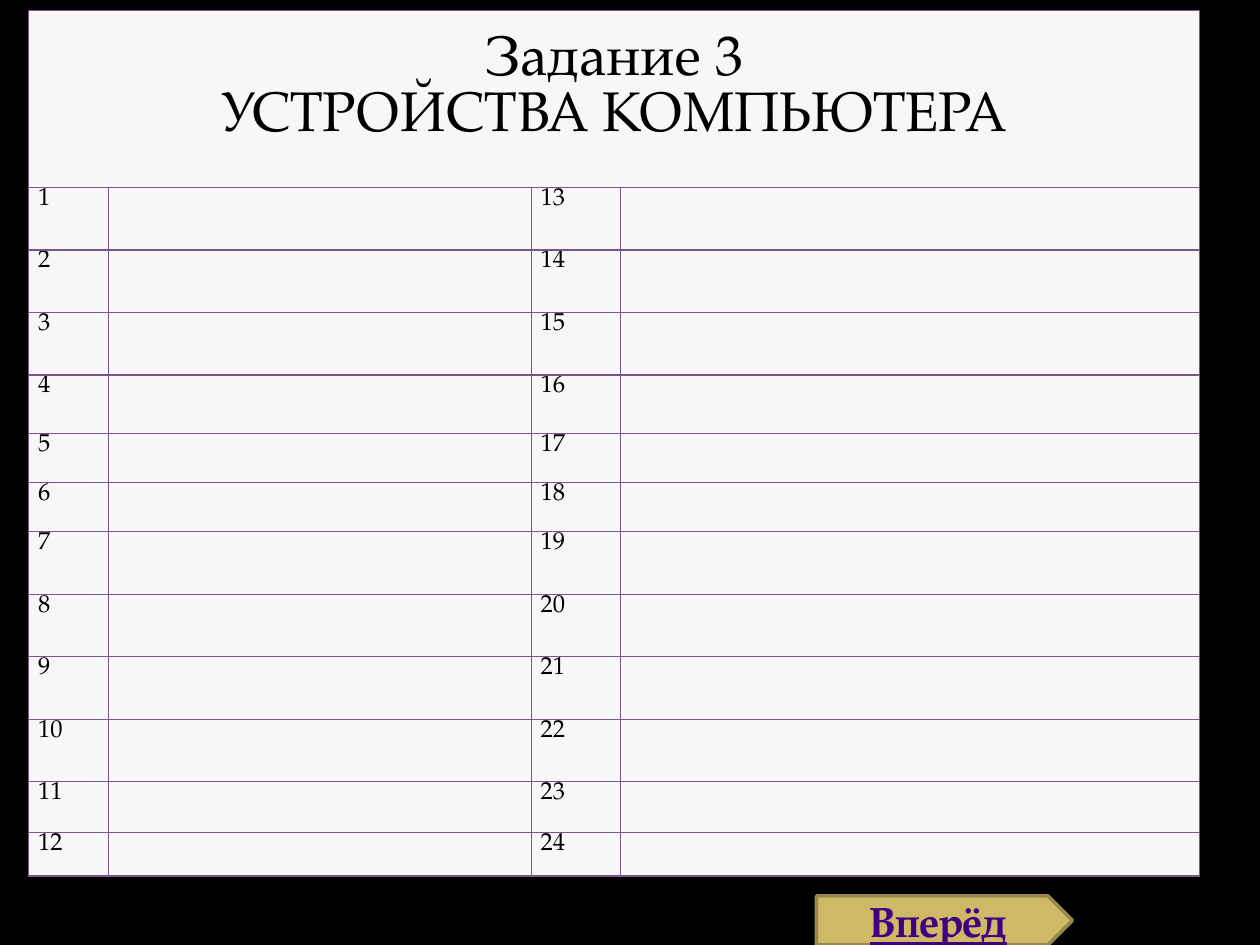
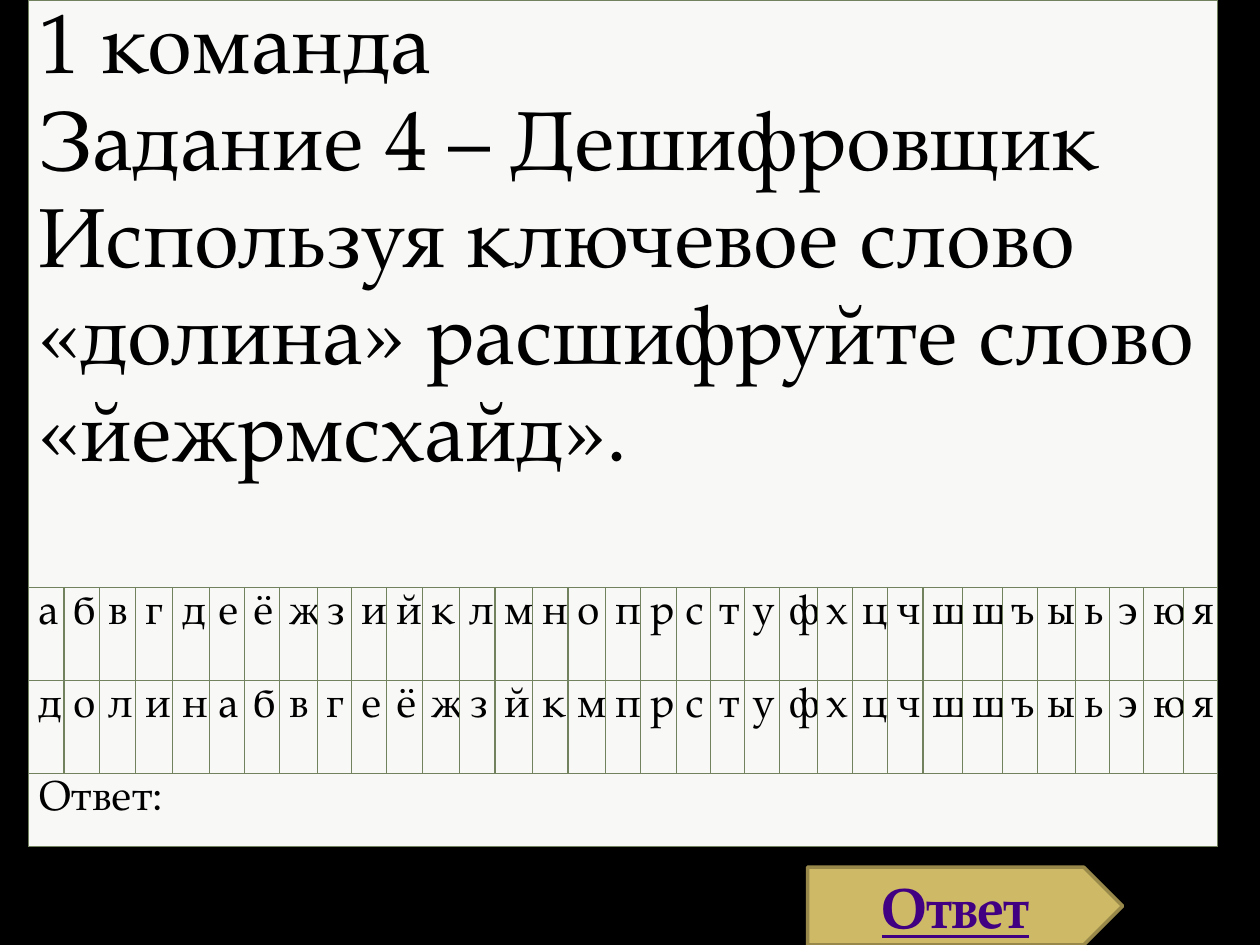
from lxml.etree import SubElement
from pptx import Presentation
from pptx.dml.color import RGBColor
from pptx.enum.shapes import MSO_SHAPE
from pptx.enum.text import MSO_ANCHOR, PP_ALIGN
from pptx.oxml.ns import qn
from pptx.util import Cm, Pt

FONT = "TeX Gyre Pagella"
BLACK, GOLD, GOLD_EDGE, LINK = "000000", "CEB966", "98894B", "410082"
TABLE_LEFT = 0.58
BLANK_LAYOUT = 6


def color(hex_string):
    return RGBColor.from_string(hex_string)


class Deck:
    """Holds the shared style and the current slide; lengths are in cm."""

    def __init__(self):
        self.presentation = Presentation()
        self.presentation.slide_width = Cm(25.4)
        self.presentation.slide_height = Cm(19.05)
        self.slide = None

    def new_slide(self):
        layout = self.presentation.slide_layouts[BLANK_LAYOUT]
        self.slide = self.presentation.slides.add_slide(layout)
        fill = self.slide.background.fill
        fill.solid()
        fill.fore_color.rgb = color(BLACK)

    def add_lines(self, text_frame, lines, size, text_color=BLACK, bold=False,
                  underline=False, align=PP_ALIGN.LEFT, spacing=1.0):
        for index, line in enumerate(lines):
            paragraph = text_frame.paragraphs[0] if index == 0 else text_frame.add_paragraph()
            paragraph.alignment = align
            paragraph.line_spacing = spacing
            run = paragraph.add_run()
            run.text = line
            run.font.name = FONT
            run.font.size = Pt(size)
            run.font.bold = bold
            run.font.underline = underline
            run.font.color.rgb = color(text_color)

    def style_cell(self, cell, fill_color, border_color):
        cell.margin_left = cell.margin_right = Cm(0.19)
        cell.margin_top = cell.margin_bottom = 0
        properties = cell._tc.get_or_add_tcPr()
        for side in ("a:lnL", "a:lnR", "a:lnT", "a:lnB"):
            line = SubElement(properties, qn(side), w=str(Pt(0.75)))
            line_fill = SubElement(line, qn("a:solidFill"))
            SubElement(line_fill, qn("a:srgbClr"), val=border_color)
        cell.fill.solid()
        cell.fill.fore_color.rgb = color(fill_color)

    def table(self, top, column_widths, row_heights, fill_color, border_color):
        frame = self.slide.shapes.add_table(
            len(row_heights), len(column_widths), Cm(TABLE_LEFT), Cm(top),
            Cm(sum(column_widths)), Cm(sum(row_heights)))
        table = frame.table
        table.first_row = table.horz_banding = False
        for column, width in zip(table.columns, column_widths):
            column.width = Cm(width)
        for row, height in zip(table.rows, row_heights):
            row.height = Cm(height)
        for cell in table.iter_cells():
            self.style_cell(cell, fill_color, border_color)
        return table

    def merge_row(self, table, row):
        cell = table.cell(row, 0)
        cell.merge(table.cell(row, len(table.columns) - 1))
        return cell

    def button(self, label, left, top, width, height, size):
        shape = self.slide.shapes.add_shape(
            MSO_SHAPE.PENTAGON, Cm(left), Cm(top), Cm(width), Cm(height))
        shape.shadow.inherit = False
        shape.fill.solid()
        shape.fill.fore_color.rgb = color(GOLD)
        shape.line.color.rgb = color(GOLD_EDGE)
        shape.line.width = Pt(2)
        shape.text_frame.word_wrap = True
        shape.text_frame.vertical_anchor = MSO_ANCHOR.MIDDLE
        self.add_lines(shape.text_frame, [label], size, LINK, bold=True,
                       underline=True, align=PP_ALIGN.CENTER)


def devices_slide(deck):
    deck.new_slide()

    # Heading row and two numbered answer columns
    answer_rows = 12
    row_heights = [3.57] + [1.26] * 3 + [1.18] + [0.99] * 2 + [1.26] * 4 + [1.03, 0.87]
    table = deck.table(0.21, [1.6, 8.53, 1.79, 11.68], row_heights, "F8F6F9", "77568A")
    heading = deck.merge_row(table, 0)
    heading.margin_top = Cm(0.49)
    deck.add_lines(heading.text_frame, ["Задание 3", "УСТРОЙСТВА КОМПЬЮТЕРА"], 32,
                   align=PP_ALIGN.CENTER)
    for row in range(1, answer_rows + 1):
        for column, number in ((0, row), (2, row + answer_rows)):
            deck.add_lines(table.cell(row, column).text_frame, [str(number)], 14)

    deck.button("Вперёд", 16.46, 18.06, 5.16, 0.99, 24)


def cipher_slide(deck):
    deck.new_slide()

    # The cipher alphabet is the key word followed by the unused letters
    alphabet = "абвгдеёжзийклмнопрстуфхцчшщъыьэюя"
    key = "долина"
    cipher = key + "".join(letter for letter in alphabet if letter not in key)

    # Column widths by the letter that heads the column
    width_groups = {"зстьэя": 0.69, "вгд": 0.74, "жкмофы": 0.76, "шщю": 0.8}
    widths = {letter: width for group, width in width_groups.items() for letter in group}
    column_widths = [widths.get(letter, 0.71) for letter in alphabet]

    # Task, both alphabets and the answer line
    table = deck.table(0, column_widths, [11.84, 1.88, 1.88, 1.47], "F8F8F7", "72825E")
    task = ["1 команда", "Задание 4 – Дешифровщик",
            "Используя ключевое слово «долина» расшифруйте слово «йежрмсхайд»."]
    deck.add_lines(deck.merge_row(table, 0).text_frame, task, 48, spacing=1.15)
    for row, letters in enumerate((alphabet, cipher), start=1):
        for column, letter in enumerate(letters):
            deck.add_lines(table.cell(row, column).text_frame, [letter], 24, spacing=1.15)
    deck.add_lines(deck.merge_row(table, 3).text_frame, ["Ответ:"], 24, spacing=1.15)

    deck.button("Ответ", 16.28, 17.48, 6.35, 1.57, 32)


def main():
    deck = Deck()
    devices_slide(deck)
    cipher_slide(deck)
    deck.presentation.save("out.pptx")


if __name__ == "__main__":
    main()
